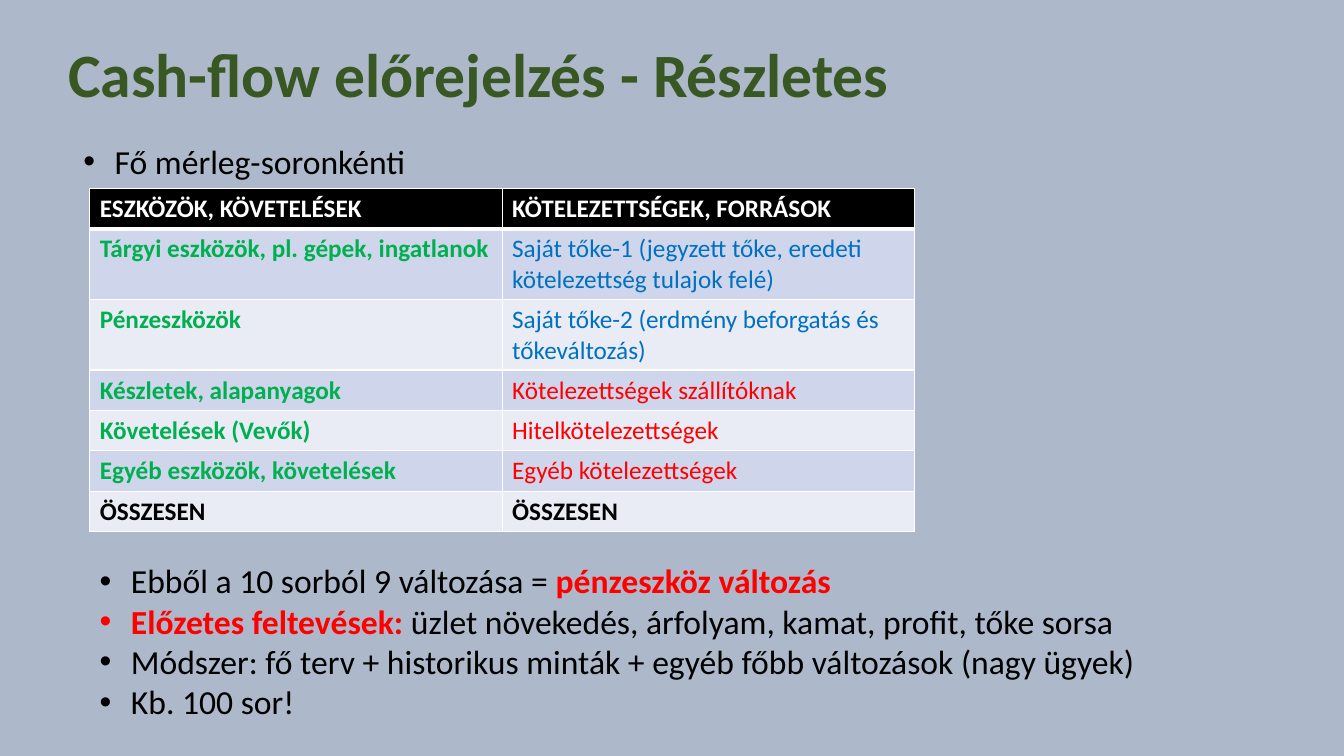
from lxml.etree import SubElement
from pptx import Presentation
from pptx.dml.color import RGBColor
from pptx.enum.text import MSO_ANCHOR
from pptx.oxml.ns import qn
from pptx.util import Inches, Pt

COLORS = {
    "background": "ADB9CA", "title": "385723", "black": "000000", "white": "FFFFFF",
    "asset": "00B050", "equity": "0070C0", "red": "FF0000",
    "band_dark": "CFD5EA", "band_light": "E9EBF5",
}

# A run is (text, color, bold); a paragraph is a list of runs.
TITLE = [[("Cash-flow előrejelzés - Részletes", "title", True)]]
INTRO = [[("Fő mérleg-soronkénti", "black", False)]]
NOTES = [
    [("Ebből a 10 sorból 9 változása = ", "black", False),
     ("pénzeszköz változás", "red", True)],
    [("Előzetes feltevések: ", "red", True),
     ("üzlet növekedés, árfolyam, kamat, profit, tőke sorsa", "black", False)],
    [("Módszer: fő terv + historikus minták + egyéb főbb változások (nagy ügyek)",
      "black", False)],
    [("Kb. 100 sor!", "black", False)],
]

# Balance sheet: left text, right text, left color, right color, lines of text
BALANCE = [
    ("ESZKÖZÖK, KÖVETELÉSEK", "KÖTELEZETTSÉGEK, FORRÁSOK", "white", "white", 1),
    ("Tárgyi eszközök, pl. gépek, ingatlanok",
     "Saját tőke-1 (jegyzett tőke, eredeti kötelezettség tulajok felé)",
     "asset", "equity", 2),
    ("Pénzeszközök", "Saját tőke-2 (erdmény beforgatás és tőkeváltozás)",
     "asset", "equity", 2),
    ("Készletek, alapanyagok", "Kötelezettségek szállítóknak", "asset", "red", 1),
    ("Követelések (Vevők)", "Hitelkötelezettségek", "asset", "red", 1),
    ("Egyéb eszközök, követelések", "Egyéb kötelezettségek", "asset", "red", 1),
    ("ÖSSZESEN", "ÖSSZESEN", "black", "black", 1),
]
COLUMN_WIDTH = 4.09
ROW_HEIGHT = {1: 0.4, 2: 0.7}
BULLET_INDENT = Inches(0.31)


def rgb(name):
    return RGBColor.from_string(COLORS[name])


def write(tf, paragraphs, size, bullet=False, line_spacing=None):
    tf.word_wrap = True
    for i, runs in enumerate(paragraphs):
        p = tf.add_paragraph() if i else tf.paragraphs[0]
        if line_spacing:
            p.line_spacing = line_spacing
        if bullet:
            pPr = p._p.get_or_add_pPr()
            pPr.set("marL", str(BULLET_INDENT))
            pPr.set("indent", str(-BULLET_INDENT))
            SubElement(pPr, qn("a:buFont"), typeface="Arial")
            SubElement(pPr, qn("a:buChar"), char="•")
        for text, color, bold in runs:
            r = p.add_run()
            r.text = text
            r.font.name, r.font.size, r.font.bold = "Calibri", Pt(size), bold
            r.font.color.rgb = rgb(color)


def add_text(s, box, paragraphs, size, anchor=MSO_ANCHOR.TOP, **text_format):
    tf = s.shapes.add_textbox(*map(Inches, box)).text_frame
    tf.vertical_anchor = anchor
    write(tf, paragraphs, size, **text_format)


def set_borders(cell, **widths):
    tcPr = cell._tc.get_or_add_tcPr()
    for side, width in widths.items():
        line = SubElement(tcPr, qn(f"a:ln{side}"), w=str(Pt(width)))
        fill = SubElement(line, qn("a:solidFill"))
        SubElement(fill, qn("a:srgbClr"), val=COLORS["white"])


def add_balance(s, left, top):
    heights = [ROW_HEIGHT[row[-1]] for row in BALANCE]
    table = s.shapes.add_table(len(BALANCE), 2, Inches(left), Inches(top),
                               Inches(2 * COLUMN_WIDTH), Inches(sum(heights))).table
    for column in table.columns:
        column.width = Inches(COLUMN_WIDTH)
    last = len(BALANCE) - 1
    for i, (assets, sources, asset_color, source_color, _) in enumerate(BALANCE):
        table.rows[i].height = Inches(heights[i])
        band = "band_dark" if i % 2 else "band_light"
        for j, (text, color) in enumerate([(assets, asset_color), (sources, source_color)]):
            cell = table.cell(i, j)
            set_borders(cell, L=1, R=1, T=3 if i == 1 else 1, B=1 if i else 3)
            cell.fill.solid()
            cell.fill.fore_color.rgb = rgb(band if i else "black")
            bold = j == 0 or i in (0, last)
            write(cell.text_frame, [[(text, color, bold)]], 18)


def main():
    prs = Presentation()
    prs.slide_width, prs.slide_height = Inches(13.33), Inches(7.5)
    s = prs.slides.add_slide(prs.slide_layouts[6])
    s.background.fill.solid()
    s.background.fill.fore_color.rgb = rgb("background")
    add_text(s, (0.58, 0.36, 11.99, 0.79), TITLE, 44,
             anchor=MSO_ANCHOR.BOTTOM, line_spacing=0.9)
    add_text(s, (0.73, 1.35, 10.4, 0.5), INTRO, 24, bullet=True)
    add_balance(s, 0.89, 1.87)
    add_text(s, (0.89, 5.51, 11.89, 1.72), NOTES, 24, bullet=True)
    prs.save("out.pptx")


if __name__ == "__main__":
    main()
